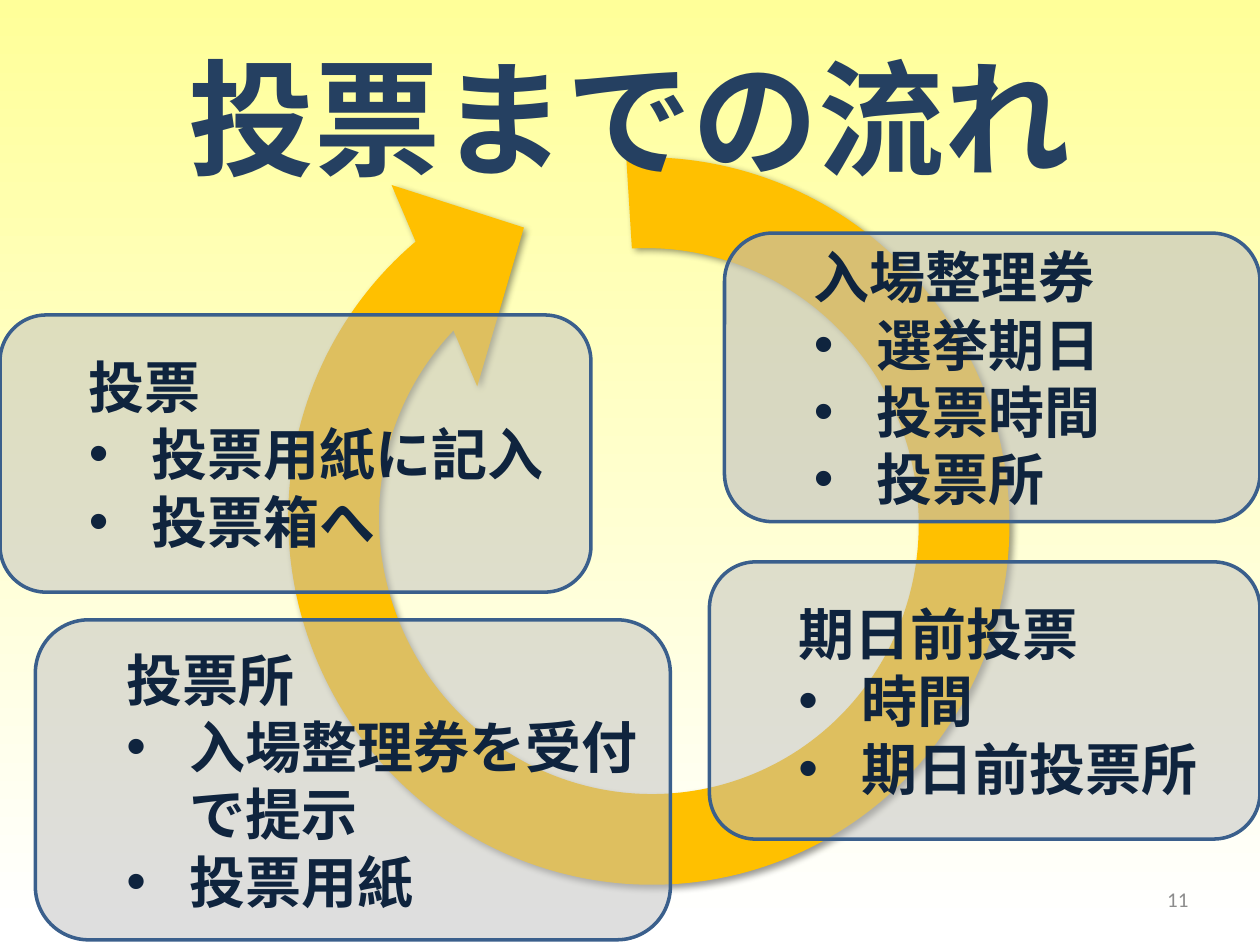
import pptx
import pptx.util
import pptx.dml.color
import pptx.enum.shapes
import pptx.enum.text
import pptx.oxml
import pptx.oxml.ns
import lxml.etree

Pt = pptx.util.Pt
qn = pptx.oxml.ns.qn
SHAPES = pptx.enum.shapes.MSO_SHAPE
ALIGN = pptx.enum.text.PP_ALIGN
JAPANESE = "Noto Sans CJK JP"
COLORS = {
    "sky": "FFFF99", "ground": "FFFFFF", "cycle": "FFC000", "title": "254061",
    "number": "8C8C8C", "panel": "BFBFBF", "border": "3A5F8C", "text": "0F243E",
}
TITLE = "投票までの流れ"
PAGE_NUMBER = "11"
STEPS = [
    ("入場整理券", ["選挙期日", "投票時間", "投票所"], (414, 133.2, 306, 164.9), 60),
    ("期日前投票", ["時間", "期日前投票所"], (405.4, 321.1, 314.6, 158.4), 50),
    ("投票所", ["入場整理券を受付で提示", "投票用紙"], (20.2, 354.2, 362.9, 182.9), 50),
    ("投票", ["投票用紙に記入", "投票箱へ"], (0, 180, 337.7, 158.4), 50),
]
CYCLE_BOX = (126, 55.4, 489.6, 484.6)
CYCLE_ADJUSTMENTS = (0.107, 11.566, 203.979, 11.245, 0.129)
INDENT = 36


def color(name):
    return pptx.dml.color.RGBColor.from_string(COLORS[name])


def points(box):
    return [Pt(length) for length in box]


def add_run(paragraph, text, size, color_name, font, bold):
    run = paragraph.add_run()
    run.text = text
    run.font.size = Pt(size)
    run.font.name = font
    run.font.bold = bold
    run.font.color.rgb = color(color_name)
    east_asian = lxml.etree.Element(qn("a:ea"), typeface=font)
    run.font._element.find(qn("a:latin")).addnext(east_asian)


def add_label(slide, box, text, size, color_name, font, bold, alignment):
    frame = slide.shapes.add_textbox(*points(box)).text_frame
    frame.word_wrap = True
    frame.vertical_anchor = pptx.enum.text.MSO_ANCHOR.MIDDLE
    frame.paragraphs[0].alignment = alignment
    add_run(frame.paragraphs[0], text, size, color_name, font, bold)


def add_filled(slide, preset, box, color_name):
    shape = slide.shapes.add_shape(preset, *points(box))
    shape.shadow.inherit = False
    shape.fill.solid()
    shape.fill.fore_color.rgb = color(color_name)
    return shape


def add_cycle(slide):
    cycle = add_filled(slide, SHAPES.CIRCULAR_ARROW, CYCLE_BOX, "cycle")
    cycle.rotation = 247.7
    cycle.line.fill.background()
    for index, value in enumerate(CYCLE_ADJUSTMENTS):
        cycle.adjustments[index] = value
    effects = cycle._element.spPr.find(qn("a:effectLst"))
    shadow = lxml.etree.SubElement(
        effects, qn("a:outerShdw"), blurRad=str(Pt(4)), dist=str(Pt(3)),
        dir="2700000", algn="tl", rotWithShape="0")
    shade = lxml.etree.SubElement(shadow, qn("a:srgbClr"), val="000000")
    lxml.etree.SubElement(shade, qn("a:alpha"), val="40000")


def add_step(slide, heading, details, box, opacity):
    panel = add_filled(slide, SHAPES.ROUNDED_RECTANGLE, box, "panel")
    tint = panel._element.spPr.find(qn("a:solidFill"))[0]
    lxml.etree.SubElement(tint, qn("a:alpha"), val=str(opacity * 1000))
    panel.line.color.rgb = color("border")
    panel.line.width = Pt(2)
    frame = panel.text_frame
    frame.word_wrap = True
    frame.vertical_anchor = pptx.enum.text.MSO_ANCHOR.MIDDLE
    for index, text in enumerate([heading] + details):
        paragraph = frame.add_paragraph() if index else frame.paragraphs[0]
        paragraph.alignment = ALIGN.LEFT
        properties = paragraph._p.get_or_add_pPr()
        properties.set("marL", str(Pt(2 * INDENT if index else INDENT)))
        properties.set("indent", str(Pt(-INDENT if index else 0)))
        if index:
            lxml.etree.SubElement(properties, qn("a:buFont"), typeface="Arial")
            lxml.etree.SubElement(properties, qn("a:buChar"), char="•")
        add_run(paragraph, text, 32, "text", JAPANESE, True)


def main():
    deck = pptx.Presentation()
    deck.slide_width, deck.slide_height = Pt(720), Pt(540)
    slide = deck.slides.add_slide(deck.slide_layouts[6])
    backdrop = slide.background.fill
    backdrop.gradient()
    backdrop.gradient_angle = 270
    stops = (("sky", 0), ("ground", 0.98))
    for stop, (name, position) in zip(backdrop.gradient_stops, stops):
        stop.color.rgb = color(name)
        stop.position = position
    add_cycle(slide)
    add_label(slide, (36, 21.6, 648, 90), TITLE, 72, "title", JAPANESE, True, ALIGN.CENTER)
    add_label(slide, (518.4, 499.7, 167.8, 28.8), PAGE_NUMBER, 12, "number",
              "Calibri", False, ALIGN.RIGHT)
    for step in STEPS:
        add_step(slide, *step)
    deck.save("out.pptx")


if __name__ == "__main__":
    main()
